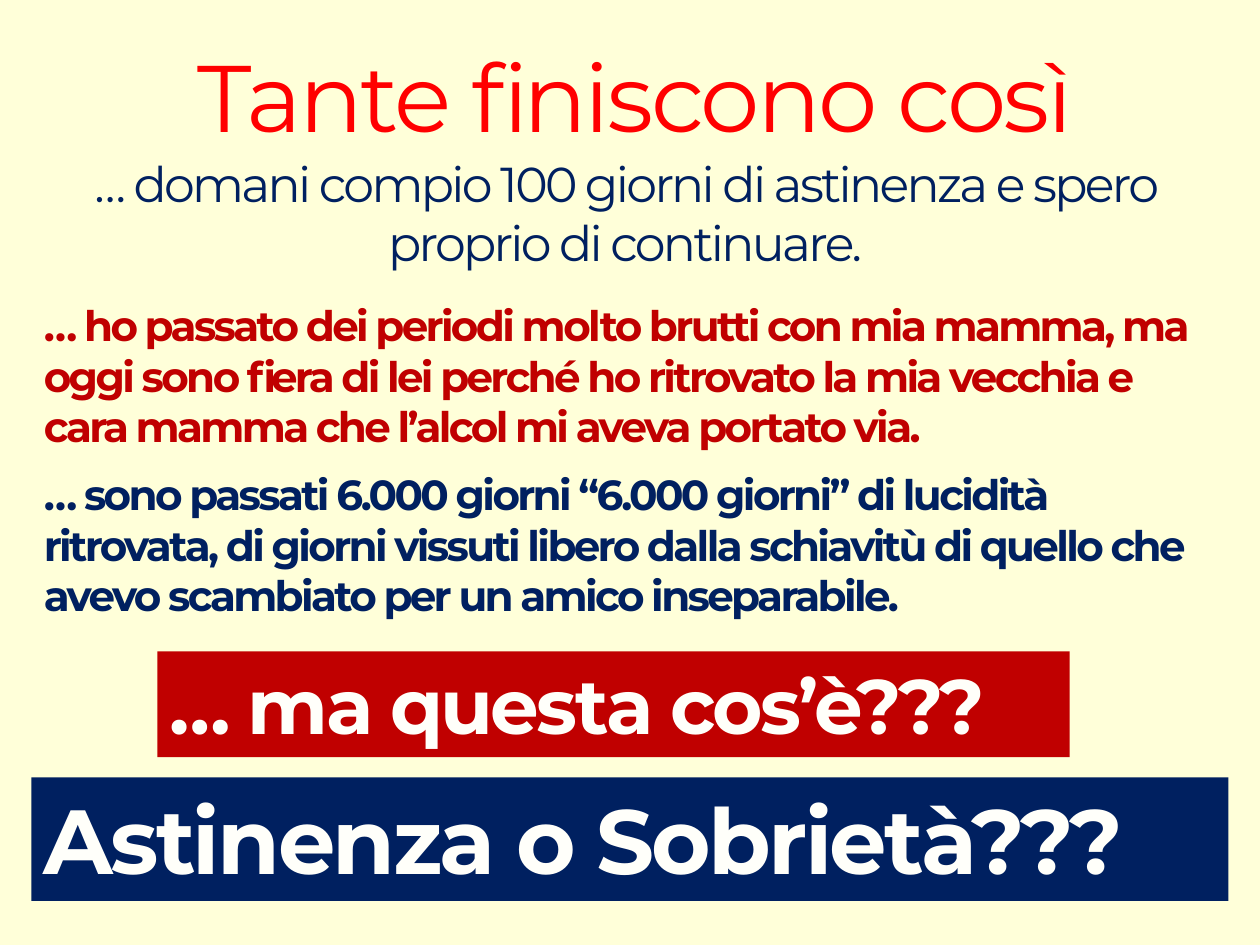
import pptx
import pptx.util
import pptx.dml.color
import pptx.enum.shapes
import pptx.enum.text

Inches = pptx.util.Inches
ALIGN = pptx.enum.text.PP_ALIGN

# Content
FONT = "Montserrat"
CREAM, RED, DARK_RED, NAVY, WHITE = "FFFFD9", "FF0000", "C00000", "002060", "FFFFFA"

TITLE = ("Tante finiscono così", (0.33, 0.25, 9.42, 1.01), 54, RED)

# text, (left, top, width, height), size, colour, bold, alignment
QUOTES = [
    ("… domani compio 100 giorni di astinenza e spero proprio di continuare.",
     (0.25, 1.17, 9.42, 1.04), 28, NAVY, False, ALIGN.CENTER),
    ("… ho passato dei periodi molto brutti con mia mamma, ma oggi sono fiera di lei "
     "perché ho ritrovato la mia vecchia e cara mamma che l’alcol mi aveva portato via.",
     (0.25, 2.33, 9.5, 1.31), 24, DARK_RED, True, ALIGN.LEFT),
    ("… sono passati 6.000 giorni “6.000 giorni” di lucidità ritrovata, di giorni vissuti "
     "libero dalla schiavitù di quello che avevo scambiato per un amico inseparabile.",
     (0.25, 3.67, 9.42, 1.31), 24, NAVY, True, ALIGN.LEFT),
]

# text, (left, top, width, height), size, fill
BANNERS = [
    ("… ma questa cos’è???", (1.25, 5.17, 7.24, 0.84), 44, DARK_RED),
    ("Astinenza o Sobrietà???", (0.25, 6.17, 9.5, 0.98), 52, NAVY),
]


def colour(hex_text):
    return pptx.dml.color.RGBColor.from_string(hex_text)


def fill_solid(target, hex_text):
    target.fill.solid()
    target.fill.fore_color.rgb = colour(hex_text)


def write(shape, text, size, hex_text, bold, alignment):
    frame = shape.text_frame
    frame.word_wrap = True
    frame.auto_size = pptx.enum.text.MSO_AUTO_SIZE.SHAPE_TO_FIT_TEXT
    frame.vertical_anchor = pptx.enum.text.MSO_ANCHOR.TOP
    paragraph = frame.paragraphs[0]
    paragraph.alignment = alignment
    run = paragraph.add_run()
    run.text = text
    run.font.name = FONT
    run.font.size = pptx.util.Pt(size)
    run.font.bold = bold
    run.font.color.rgb = colour(hex_text)
    # Tight letter spacing, in hundredths of a point
    run._r.get_or_add_rPr().set("spc", "-150")


def main():
    presentation = pptx.Presentation()
    presentation.slide_width, presentation.slide_height = Inches(10), Inches(7.5)
    slide = presentation.slides.add_slide(presentation.slide_layouts[5])
    fill_solid(slide.background, CREAM)

    # Title
    text, box, size, hex_text = TITLE
    title = slide.shapes.title
    title.left, title.top, title.width, title.height = map(Inches, box)
    write(title, text, size, hex_text, False, ALIGN.CENTER)

    # Quotes
    for text, box, size, hex_text, bold, alignment in QUOTES:
        quote = slide.shapes.add_textbox(*map(Inches, box))
        write(quote, text, size, hex_text, bold, alignment)

    # Banners
    for text, box, size, fill in BANNERS:
        banner = slide.shapes.add_shape(
            pptx.enum.shapes.MSO_SHAPE.RECTANGLE, *map(Inches, box))
        banner.shadow.inherit = False
        fill_solid(banner, fill)
        banner.line.fill.background()
        write(banner, text, size, WHITE, True, ALIGN.LEFT)

    presentation.save("out.pptx")


if __name__ == "__main__":
    main()
